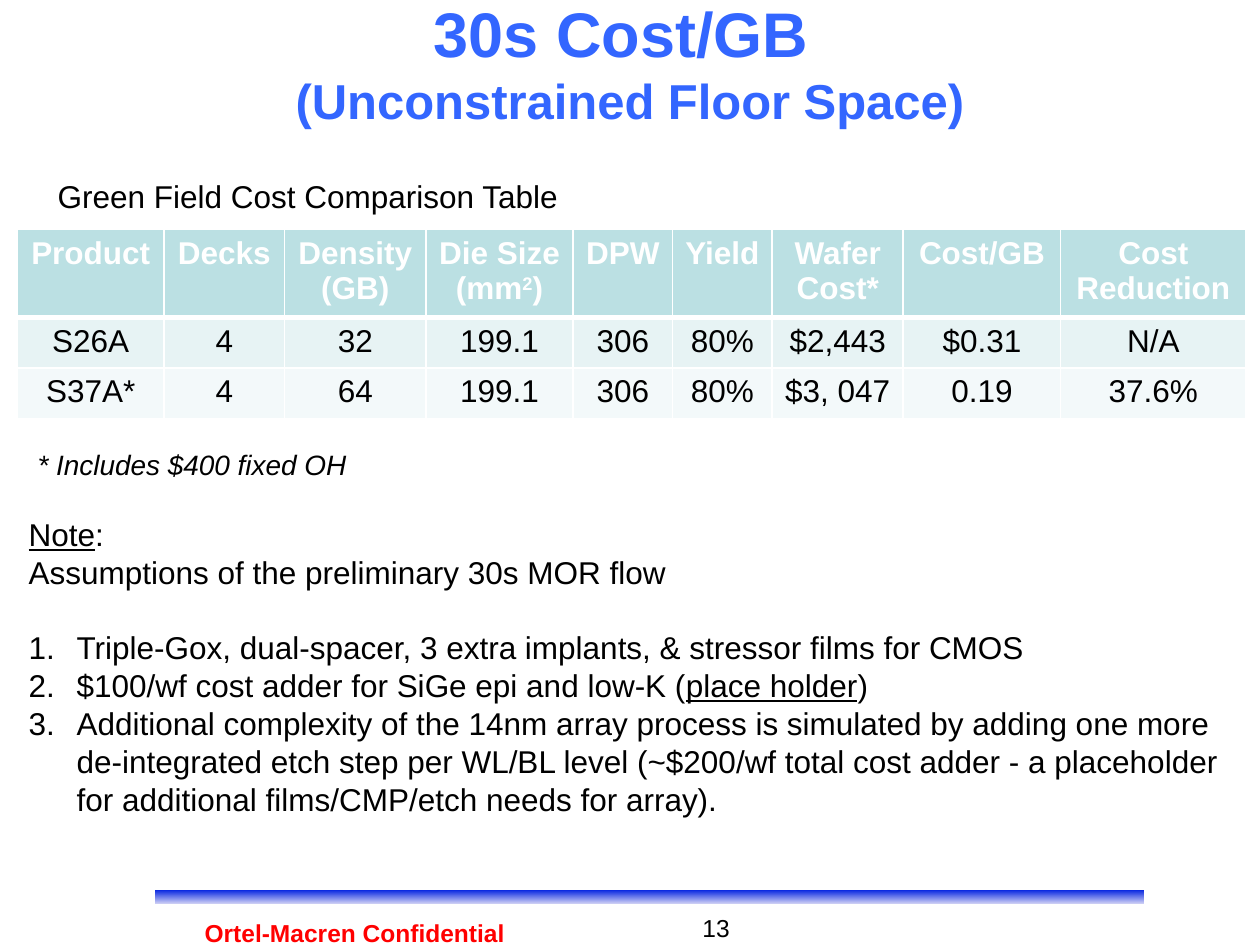
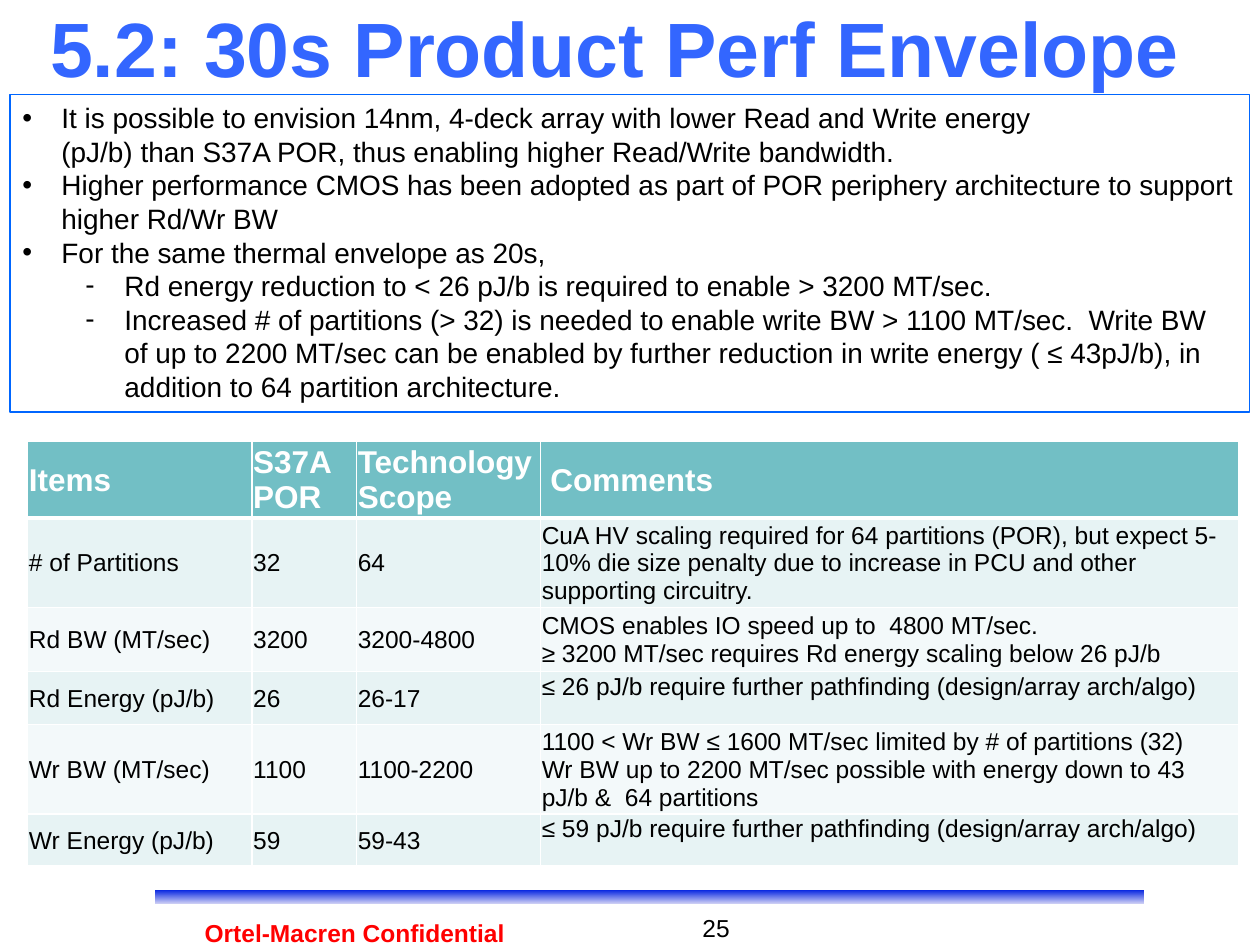
from lxml.etree import SubElement
from pptx import Presentation
from pptx.dml.color import RGBColor
from pptx.enum.shapes import MSO_SHAPE
from pptx.enum.text import MSO_ANCHOR, PP_ALIGN
from pptx.oxml.ns import qn
from pptx.util import Inches, Pt

FONT = "Arial"
BLACK, WHITE = "000000", "FFFFFF"
TITLE_BLUE, FOOTER_RED = "3366FF", "FF0000"
BAND_TOP, BAND_BOTTOM = "0020E0", "DADAF6"
BOX_BLUE = "0066FF"
ROW_FILLS = ["E7F3F4", "F3F9FA"]
color = RGBColor.from_string


def add_frame(slide, left, top, width, height):
    """Add a wrapping text box and return its text frame."""
    box = slide.shapes.add_textbox(Inches(left), Inches(top), Inches(width), Inches(height))
    box.text_frame.word_wrap = True
    return box.text_frame


def write(frame, runs, size, ink=BLACK, align=PP_ALIGN.LEFT, bold=False, italic=False,
          mark=None, left=0, hang=0, before=0):
    """Write one paragraph; runs holds plain strings or (text, "underline" | "superscript" | size)."""
    paragraph = frame.paragraphs[0]
    if paragraph.runs:
        paragraph = frame.add_paragraph()
    properties = paragraph._p.get_or_add_pPr()
    properties.set("marL", str(Inches(left)))
    properties.set("indent", str(Inches(-hang)))
    if mark:
        SubElement(properties, qn("a:buFont"), typeface=FONT)
        if mark == "1.":
            SubElement(properties, qn("a:buAutoNum"), type="arabicPeriod")
        else:
            SubElement(properties, qn("a:buChar"), char=mark)
    paragraph.alignment = align
    if before:
        paragraph.space_before = Pt(before)
    for item in runs:
        text, style = (item, None) if isinstance(item, str) else item
        for number, line in enumerate(text.split("\n")):
            if number:
                paragraph.add_line_break()
            if not line:
                continue
            run = paragraph.add_run()
            run.text = line
            run.font.name = FONT
            run.font.size = Pt(style if isinstance(style, int) else size)
            run.font.bold, run.font.italic = bold, italic
            run.font.underline = style == "underline"
            run.font.color.rgb = color(ink)
            if style == "superscript":
                run.font._element.set("baseline", "30000")


deck = Presentation()
deck.slide_width, deck.slide_height = Inches(10), Inches(7.5)

# Shared band, title and footer
pages = [
    ("13", (0.5, 0.18, 9, 0.62), ["30s Cost/GB \n", ("(Unconstrained Floor Space)", 28)], 36),
    ("25", (0.22, 0.06, 9.33, 0.62), ["5.2: 30s Product Perf Envelope"], 44),
]
for page_number, title_place, title, title_size in pages:
    slide = deck.slides.add_slide(deck.slide_layouts[6])
    band = slide.shapes.add_shape(
        MSO_SHAPE.RECTANGLE, Inches(1.22), Inches(7.06), Inches(7.87), Inches(0.12))
    band.shadow.inherit = False
    band.fill.gradient()
    band.fill.gradient_angle = 270
    for stop, shade in zip(band.fill.gradient_stops, [BAND_TOP, BAND_BOTTOM]):
        stop.color.rgb = color(shade)
    band.fill.gradient_stops[0].position, band.fill.gradient_stops[1].position = 0, 1
    band.line.color.rgb = color(WHITE)
    band.line.width = Pt(1)

    title_frame = add_frame(slide, *title_place)
    title_frame.vertical_anchor = MSO_ANCHOR.MIDDLE
    write(title_frame, title, title_size, TITLE_BLUE, PP_ALIGN.CENTER, bold=True)
    write(add_frame(slide, 1.22, 7.24, 3.19, 0.26), ["Ortel-Macren Confidential"], 14,
          FOOTER_RED, PP_ALIGN.CENTER, bold=True)
    write(add_frame(slide, 4.75, 7.2, 1.14, 0.27), [page_number], 14, align=PP_ALIGN.RIGHT)

cost_slide, envelope_slide = deck.slides

# Cost comparison: caption, footnote and assumptions
write(add_frame(cost_slide, 0.36, 1.36, 4.38, 0.4), ["Green Field Cost Comparison Table"], 18)
write(add_frame(cost_slide, 0.2, 3.5, 2.68, 0.37), ["* Includes $400 fixed OH"], 16, italic=True)
note = add_frame(cost_slide, 0.13, 4.04, 9.73, 2.83)
write(note, [("Note", "underline"), ":"], 18)
write(note, ["Assumptions of the preliminary 30s MOR flow"], 18)
assumptions = [
    ["Triple-Gox, dual-spacer, 3 extra implants, & stressor films for CMOS"],
    ["$100/wf cost adder for SiGe epi and low-K (", ("place holder", "underline"), ")"],
    ["Additional complexity of the 14nm array process is simulated by adding one more "
     "de-integrated etch step per WL/BL level (~$200/wf total cost adder - a placeholder "
     "for additional films/CMP/etch needs for array)."],
]
for position, assumption in enumerate(assumptions):
    write(note, assumption, 18, mark="1.", left=0.38, hang=0.38, before=0 if position else 21.5)

# Performance envelope: framed findings
findings_box = envelope_slide.shapes.add_shape(
    MSO_SHAPE.RECTANGLE, Inches(0.08), Inches(0.75), Inches(9.84), Inches(2.52))
findings_box.shadow.inherit = False
findings_box.fill.background()
findings_box.line.color.rgb = color(BOX_BLUE)
findings_box.line.width = Pt(0.75)
findings_frame = findings_box.text_frame
findings_frame.word_wrap = True
findings_frame.vertical_anchor = MSO_ANCHOR.TOP
findings = [
    ("•", 0.31, "It is possible to envision 14nm, 4-deck array with lower Read and Write energy"),
    (None, 0.31, "(pJ/b) than S37A POR, thus enabling higher Read/Write bandwidth."),
    ("•", 0.31, "Higher performance CMOS has been adopted as part of POR periphery architecture "
                "to support higher Rd/Wr BW"),
    ("•", 0.31, "For the same thermal envelope as 20s,"),
    ("-", 0.81, "Rd energy reduction to < 26 pJ/b is required to enable > 3200 MT/sec."),
    ("-", 0.81, "Increased # of partitions (> 32) is needed to enable write BW > 1100 MT/sec.  "
                "Write BW of up to 2200 MT/sec can be enabled by further reduction in write "
                "energy ( ≤ 43pJ/b), in addition to 64 partition architecture."),
]
for mark, left, finding in findings:
    write(findings_frame, [finding], 16, mark=mark, left=left, hang=0.31 if mark else 0)

# Both tables
cost_rows = [
    ["Product", "Decks", "Density (GB)", ["Die Size (mm", ("2", "superscript"), ")"], "DPW",
     "Yield", "Wafer Cost*", "Cost/GB", "Cost Reduction"],
    ["S26A", "4", "32", "199.1", "306", "80%", "$2,443", "$0.31", "N/A"],
    ["S37A*", "4", "64", "199.1", "306", "80%", "$3, 047", "0.19", "37.6%"],
]
envelope_rows = [
    ["Items", "S37A \nPOR", "Technology\nScope", " Comments"],
    ["# of Partitions", "32", "64",
     "CuA HV scaling required for 64 partitions (POR), but expect 5-10% die size penalty "
     "due to increase in PCU and other supporting circuitry."],
    ["Rd BW (MT/sec)", "3200", "3200-4800",
     "CMOS enables IO speed up to  4800 MT/sec. \n"
     "≥ 3200 MT/sec requires Rd energy scaling below 26 pJ/b"],
    ["Rd Energy (pJ/b)", "26", "26-17",
     "≤ 26 pJ/b require further pathfinding (design/array arch/algo)"],
    ["Wr BW (MT/sec)", "1100", "1100-2200",
     "1100 < Wr BW ≤ 1600 MT/sec limited by # of partitions (32)\n"
     "Wr BW up to 2200 MT/sec possible with energy down to 43 pJ/b &  64 partitions"],
    ["Wr Energy (pJ/b)", "59", "59-43",
     "≤ 59 pJ/b require further pathfinding (design/array arch/algo)"],
]
tables = [
    (cost_slide, cost_rows, (0.14, 1.82), [1.16, 0.96, 1.12, 1.17, 0.79, 0.79, 1.04, 1.25, 1.47],
     [0.7, 0.4, 0.4], "BBE0E3", 18, PP_ALIGN.CENTER),
    (envelope_slide, envelope_rows, (0.22, 3.5), [1.78, 0.83, 1.46, 5.54],
     [0.6, 0.71, 0.51, 0.42, 0.7, 0.41], "72BFC5", 14, PP_ALIGN.LEFT),
]
for slide, rows, (left, top), widths, heights, header_fill, body_size, align in tables:
    table = slide.shapes.add_table(
        len(rows), len(widths), Inches(left), Inches(top),
        Inches(sum(widths)), Inches(sum(heights))).table
    for column, width in zip(table.columns, widths):
        column.width = Inches(width)
    for row, height in zip(table.rows, heights):
        row.height = Inches(height)
    for r, row in enumerate(rows):
        for c, content in enumerate(row):
            cell = table.cell(r, c)
            header = r == 0
            edges = {"L": 1, "R": 1, "T": 3 if r == 1 else 1, "B": 3 if header else 1}
            for side, weight in edges.items():
                edge = SubElement(cell._tc.get_or_add_tcPr(), qn(f"a:ln{side}"), w=str(Pt(weight)))
                SubElement(SubElement(edge, qn("a:solidFill")), qn("a:srgbClr"), val=WHITE)
            cell.fill.solid()
            cell.fill.fore_color.rgb = color(header_fill if header else ROW_FILLS[(r - 1) % 2])
            if slide is envelope_slide:
                cell.margin_left = cell.margin_right = cell.margin_top = Inches(0.01)
                cell.margin_bottom = 0
                pathfinding = c == 3 and r in (3, 5)
                cell.vertical_anchor = MSO_ANCHOR.TOP if pathfinding else MSO_ANCHOR.MIDDLE
            write(cell.text_frame, [content] if isinstance(content, str) else content,
                  18 if header else body_size, WHITE if header else BLACK, align, bold=header)

deck.save("out.pptx")
